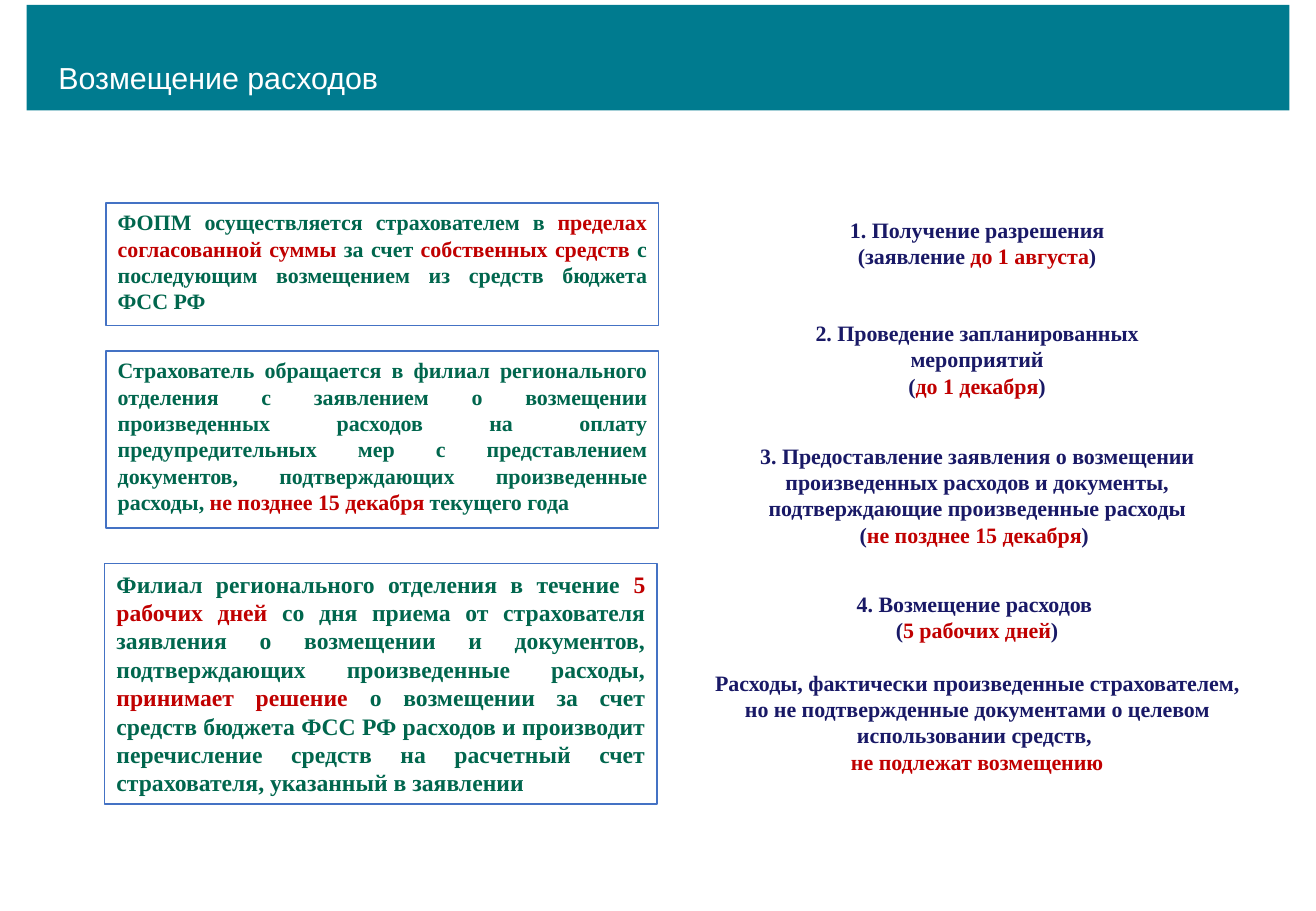
from pptx import Presentation
from pptx.dml.color import RGBColor
from pptx.enum.shapes import MSO_SHAPE
from pptx.enum.text import MSO_ANCHOR, PP_ALIGN
from pptx.util import Pt

TEAL = RGBColor(0x00, 0x7B, 0x8F)
WHITE = RGBColor(0xFF, 0xFF, 0xFF)
BLUE = RGBColor(0x44, 0x72, 0xC4)
GREEN = RGBColor(0x00, 0x66, 0x4D)
NAVY = RGBColor(0x19, 0x19, 0x66)
RED = RGBColor(0xC0, 0x00, 0x00)
SERIF = "Times New Roman"

RULES = [
    (62.64, 120.24, 72.72, 13,
     "ФОПМ осуществляется страхователем в |пределах согласованной суммы |за счет "
     "|собственных средств |с последующим возмещением из средств бюджета ФСС РФ"),
    (62.64, 208.08, 105.12, 13,
     "Страхователь обращается в филиал регионального отделения с заявлением "
     "о возмещении произведенных расходов на оплату предупредительных мер "
     "с представлением документов, подтверждающих произведенные расходы, "
     "|не позднее 15 декабря |текущего года "),
    (61.92, 334.08, 142.56, 14,
     "Филиал регионального отделения в течение |5 рабочих дней| со дня приема "
     "от страхователя заявления о возмещении и документов, подтверждающих "
     "произведенные расходы, |принимает решение |о возмещении за счет средств "
     "бюджета ФСС РФ расходов и производит перечисление средств на расчетный "
     "счет страхователя, указанный в заявлении"),
]
STEPS = [
    (124.56, 195.84, 40.32,
     ["1. Получение разрешения", "(заявление |до 1 августа|)"]),
    (185.76, 254.88, 56.16,
     ["2. Проведение запланированных мероприятий", "(|до 1 декабря|)"]),
    (258.48, 275.76, 70.56,
     ["3. Предоставление заявления о возмещении произведенных расходов "
      "и документы, подтверждающие произведенные расходы",
      "(|не позднее 15 декабря|) "]),
    (346.32, 248.4, 56.16,
     ["4. Возмещение расходов ", "(|5 рабочих дней|)"]),
    (393.12, 327.6, 70.56,
     ["Расходы, фактически произведенные страхователем, ",
      "но не подтвержденные документами о целевом использовании средств, ",
      "|не подлежат возмещению"]),
]


def write(frame, lines, size, color, align):
    """Fill a frame with bold lines; every second part between bars is red."""
    frame.word_wrap = True
    frame.vertical_anchor = MSO_ANCHOR.TOP
    for num, line in enumerate(lines):
        para = frame.add_paragraph() if num else frame.paragraphs[0]
        para.alignment = align
        font = para.font
        font.name, font.size, font.bold = SERIF, Pt(size), True
        for part, text in enumerate(line.split("|")):
            if text:
                run = para.add_run()
                run.text = text
                run.font.color.rgb = RED if part % 2 else color


def add_head(slide, left, top, width, height):
    """Draw the teal band with the slide title on it."""
    band = slide.shapes.add_shape(
        MSO_SHAPE.RECTANGLE, Pt(left), Pt(top), Pt(width), Pt(height))
    band.shadow.inherit = False
    band.fill.solid()
    band.fill.fore_color.rgb = TEAL
    band.line.fill.background()
    title = slide.shapes.title
    title.left, title.top = Pt(left + 11.52), Pt(top + 28.8)
    title.width, title.height = Pt(323.28), Pt(28.8)
    band._element.addnext(title._element)
    frame = title.text_frame
    frame.text = "Возмещение расходов"
    frame.vertical_anchor = MSO_ANCHOR.TOP
    para = frame.paragraphs[0]
    para.alignment = PP_ALIGN.LEFT
    para.font.name, para.font.size = "Arial", Pt(18)
    para.font.color.rgb = WHITE


def add_rule(slide, left, top, width, height, size, text):
    """Draw one framed rule with justified text."""
    box = slide.shapes.add_shape(
        MSO_SHAPE.RECTANGLE, Pt(left), Pt(top), Pt(width), Pt(height))
    box.shadow.inherit = False
    box.fill.solid()
    box.fill.fore_color.rgb = WHITE
    box.line.color.rgb = BLUE
    box.line.width = Pt(1)
    write(box.text_frame, [text], size, GREEN, PP_ALIGN.JUSTIFY)


def add_step(slide, mid, top, width, height, lines):
    """Place one step centred on the given axis."""
    box = slide.shapes.add_textbox(
        Pt(mid - width / 2), Pt(top), Pt(width), Pt(height))
    write(box.text_frame, lines, 13, NAVY, PP_ALIGN.CENTER)


def main():
    """Build and save the slide."""
    deck = Presentation()
    deck.slide_width, deck.slide_height = Pt(779.76), Pt(540)
    slide = deck.slides.add_slide(deck.slide_layouts[5])
    for top, width, height, lines in STEPS:
        add_step(slide, 578.88, top, width, height, lines)
    for left, top, height, size, text in RULES:
        add_rule(slide, left, top, 327.6, height, size, text)
    add_head(slide, 15.84, 2.88, 748.08, 62.64)
    deck.save("out.pptx")


if __name__ == "__main__":
    main()
